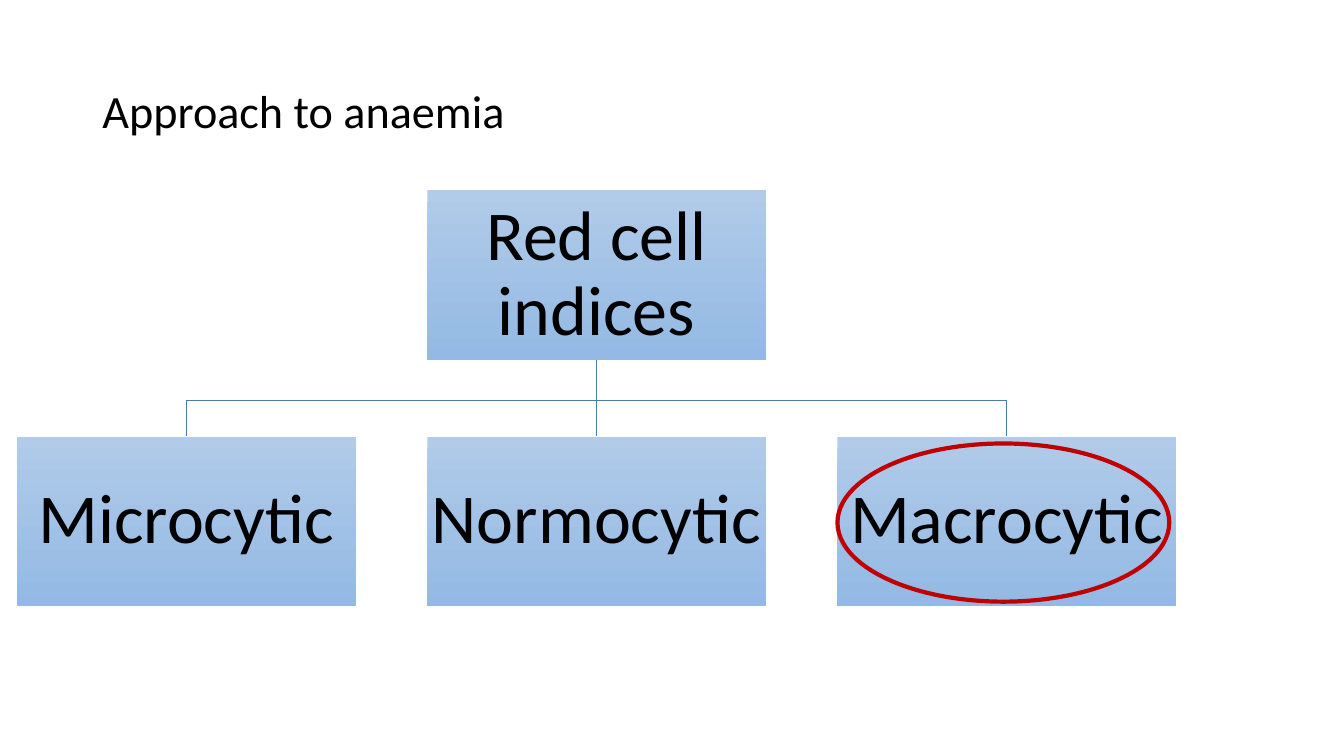
from dataclasses import dataclass

from lxml.etree import SubElement
from pptx import Presentation
from pptx.dml.color import RGBColor
from pptx.enum.shapes import MSO_CONNECTOR, MSO_SHAPE
from pptx.enum.text import MSO_ANCHOR, MSO_AUTO_SIZE, PP_ALIGN
from pptx.oxml.ns import qn
from pptx.shapes.autoshape import Shape
from pptx.slide import Slide
from pptx.text.text import TextFrame
from pptx.util import Pt


@dataclass(frozen=True)
class Theme:
    font: str = "Calibri"
    title_size: float = 33
    box_size: float = 50
    text: RGBColor = RGBColor(0x00, 0x00, 0x00)
    box_top: RGBColor = RGBColor(0xB1, 0xCB, 0xE9)
    box_bottom: RGBColor = RGBColor(0x93, 0xB9, 0xE4)
    branch: RGBColor = RGBColor(0x49, 0x7C, 0xAB)
    ring: RGBColor = RGBColor(0xC0, 0x00, 0x00)


@dataclass(frozen=True)
class Node:
    label: str
    column: int
    top: float

    @property
    def left(self) -> float:
        return FIRST_LEFT + self.column * COLUMN_STEP

    @property
    def center(self) -> float:
        return self.left + BOX_WIDTH / 2


THEME = Theme()

# Tree layout, in points
BOX_WIDTH, BOX_HEIGHT = 242, 121
FIRST_LEFT, COLUMN_STEP = 12.2, 293
ROOT_TOP, CHILD_TOP = 136, 311.8
BRANCH_Y = 286

ROOT = Node("Red cell indices", 1, ROOT_TOP)
CHILDREN = [
    Node(label, column, CHILD_TOP)
    for column, label in enumerate(["Microcytic", "Normocytic", "Macrocytic"])
]


def format_text(frame: TextFrame, size: float, alignment: PP_ALIGN) -> None:
    frame.word_wrap = True
    frame.auto_size = MSO_AUTO_SIZE.NONE
    frame.vertical_anchor = MSO_ANCHOR.MIDDLE
    for paragraph in frame.paragraphs:
        paragraph.alignment = alignment
        paragraph.line_spacing = 0.9
        for run in paragraph.runs:
            run.font.name = THEME.font
            run.font.size = Pt(size)
            run.font.color.rgb = THEME.text


def add_title(slide: Slide, text: str) -> None:
    title = slide.shapes.title
    title.left, title.top, title.width, title.height = Pt(66), Pt(28.8), Pt(828), Pt(104.4)
    title.text_frame.text = text
    format_text(title.text_frame, THEME.title_size, PP_ALIGN.LEFT)


def add_branch(slide: Slide, parent: Node, child: Node) -> None:
    start_y = parent.top + BOX_HEIGHT
    if parent.column == child.column:
        branch = slide.shapes.add_connector(
            MSO_CONNECTOR.STRAIGHT,
            Pt(parent.center), Pt(start_y), Pt(child.center), Pt(child.top),
        )
        SubElement(branch._element.spPr, qn("a:effectLst"))
    else:
        builder = slide.shapes.build_freeform(Pt(parent.center), Pt(start_y))
        corners = [(parent.center, BRANCH_Y), (child.center, BRANCH_Y), (child.center, child.top)]
        builder.add_line_segments([(Pt(x), Pt(y)) for x, y in corners], close=False)
        branch = builder.convert_to_shape()
        branch.fill.background()
        branch.shadow.inherit = False
    branch.line.color.rgb = THEME.branch
    branch.line.width = Pt(1)


def add_box(slide: Slide, node: Node) -> Shape:
    box = slide.shapes.add_shape(
        MSO_SHAPE.RECTANGLE, Pt(node.left), Pt(node.top), Pt(BOX_WIDTH), Pt(BOX_HEIGHT)
    )
    box.shadow.inherit = False
    box.line.fill.background()
    box.fill.gradient()
    box.fill.gradient_angle = 270
    for stop, color in zip(box.fill.gradient_stops, (THEME.box_top, THEME.box_bottom)):
        stop.color.rgb = color
    frame = box.text_frame
    frame.margin_left = frame.margin_right = frame.margin_top = frame.margin_bottom = Pt(2)
    frame.text = node.label
    format_text(frame, THEME.box_size, PP_ALIGN.CENTER)
    return box


def add_ring(slide: Slide, node: Node) -> None:
    ring = slide.shapes.add_shape(
        MSO_SHAPE.OVAL, Pt(node.left), Pt(node.top + 5), Pt(237), Pt(113)
    )
    ring.shadow.inherit = False
    ring.fill.background()
    ring.line.color.rgb = THEME.ring
    ring.line.width = Pt(3)


def main() -> None:
    presentation = Presentation()
    presentation.slide_width, presentation.slide_height = Pt(960), Pt(540)
    slide = presentation.slides.add_slide(presentation.slide_layouts[5])

    # Title
    add_title(slide, "Approach to anaemia")

    # Branches behind the boxes
    for child in CHILDREN:
        add_branch(slide, ROOT, child)

    # Boxes, with the last one ringed
    for node in [ROOT, *CHILDREN]:
        add_box(slide, node)
    add_ring(slide, CHILDREN[-1])

    presentation.save("out.pptx")


if __name__ == "__main__":
    main()
